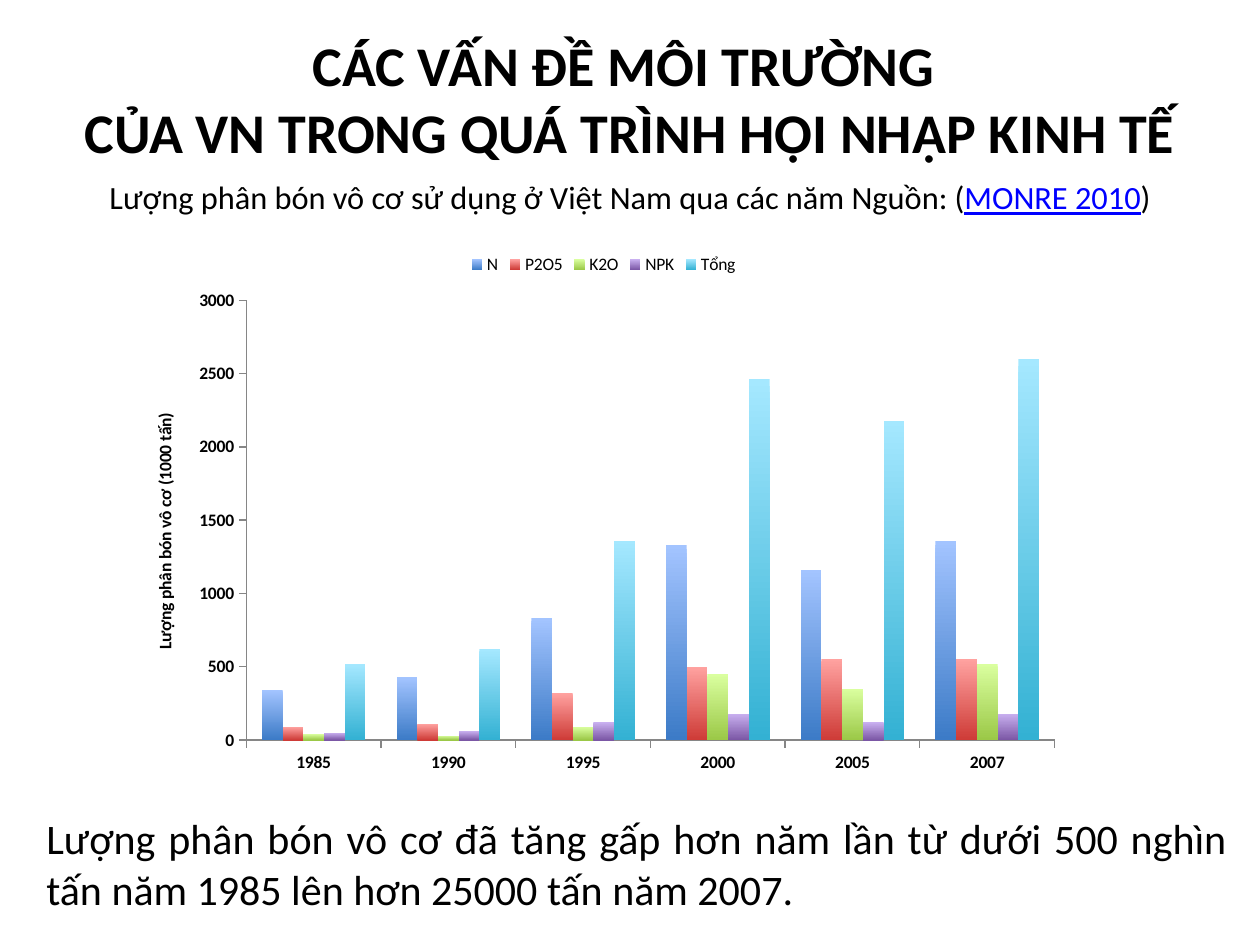
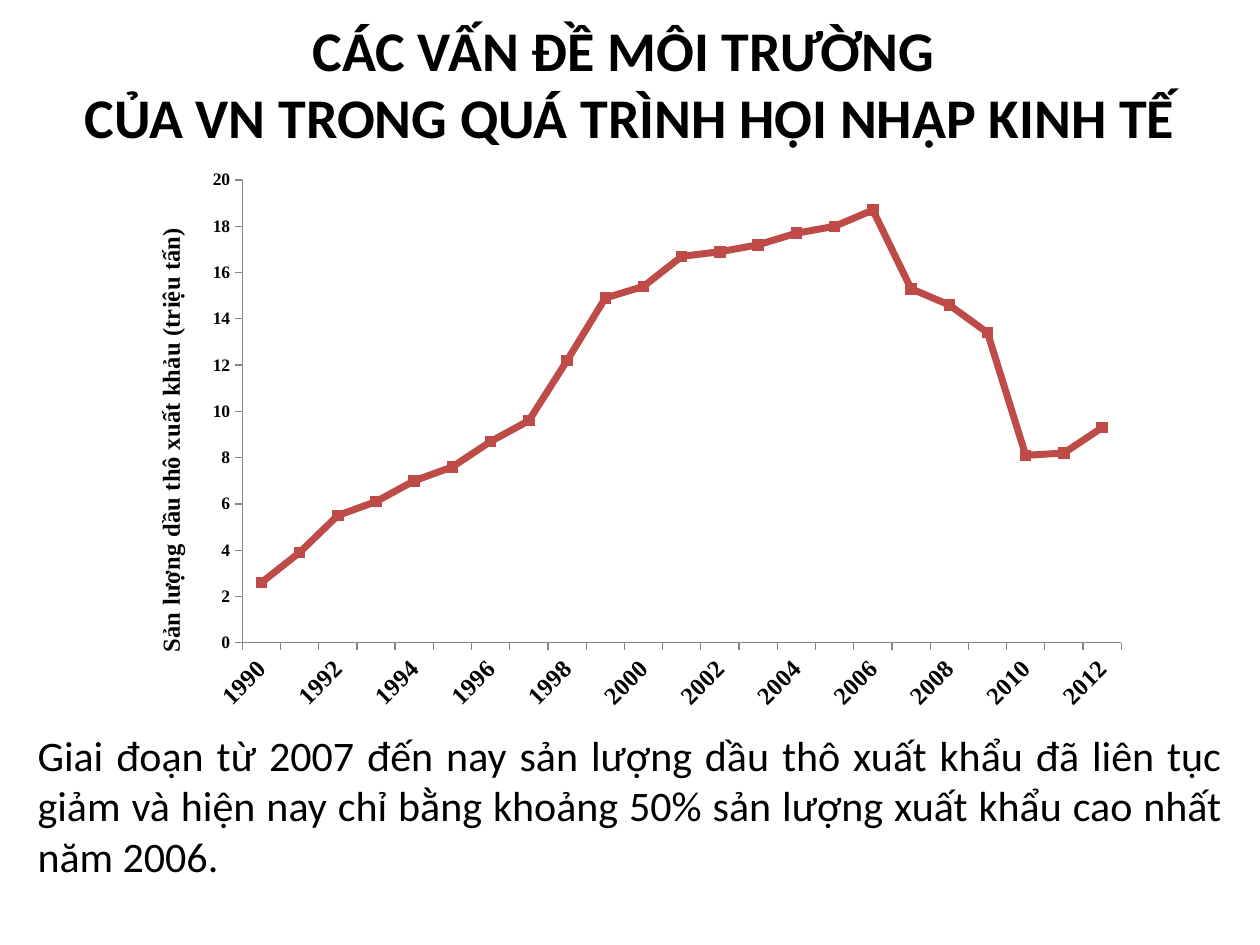
from dataclasses import dataclass
from lxml import etree
from pptx import Presentation
from pptx.chart.data import CategoryChartData as Data
from pptx.dml.color import RGBColor as RGB
from pptx.enum.chart import XL_CHART_TYPE as Kind, XL_LEGEND_POSITION as Pos
from pptx.enum.chart import XL_MARKER_STYLE as Mark, XL_TICK_MARK as Tick
from pptx.enum.text import MSO_ANCHOR as Anchor, MSO_AUTO_SIZE as Fit, PP_ALIGN as Align
from pptx.oxml.ns import qn
from pptx.util import Inches, Pt

TITLE = "CÁC VẤN ĐỀ MÔI TRƯỜNG \vCỦA VN TRONG QUÁ TRÌNH HỘI NHẬP KINH TẾ"
SOURCE = ["Lượng phân bón vô cơ sử dụng ở Việt Nam qua các năm Nguồn: (", "MONRE 2010", ")"]
FERT_NOTE = ("Lượng phân bón vô cơ đã tăng gấp hơn năm lần từ dưới 500 nghìn "
             "tấn năm 1985 lên hơn 25000 tấn năm 2007.")
OIL_NOTE = ("Giai đoạn từ 2007 đến nay sản lượng dầu thô xuất khẩu đã liên tục "
            "giảm và hiện nay chỉ bằng khoảng 50% sản lượng xuất khẩu cao nhất năm 2006.")

FERT_AXIS = "Lượng phân bón vô cơ (1000 tấn)"
FERT_YEARS = [1985, 1990, 1995, 2000, 2005, 2007]
FERT = {
    "N": [340, 430, 830, 1330, 1160, 1360],
    "P2O5": [90, 110, 320, 500, 550, 550],
    "K2O": [40, 30, 90, 450, 350, 520],
    "NPK": [50, 60, 120, 180, 120, 180],
    "Tổng": [520, 620, 1360, 2460, 2180, 2600],
}
OIL_AXIS = "Sản lượng dầu thô xuất khảu (triệu tấn)"
OIL_YEARS = range(1990, 2013)
OIL = {"Series 1": [2.6, 3.9, 5.5, 6.1, 7, 7.6, 8.7, 9.6, 12.2, 14.9, 15.4, 16.7,
                    16.9, 17.2, 17.7, 18, 18.7, 15.3, 14.6, 13.4, 8.1, 8.2, 9.3]}


@dataclass(frozen=True)
class Theme:
    sans: str = "Calibri"
    serif: str = "Times New Roman"
    ink: str = "000000"
    link: str = "0000FF"
    axis: str = "868686"
    line: str = "BE4B48"
    bars: tuple = (("A3C4FF", "3C7BC7"), ("FFA2A0", "CE3B37"), ("DAFF9F", "9BC847"),
                   ("C9B0F0", "7B57A5"), ("A5E8FF", "33B1D3"))
    head: float = 32
    body: float = 24
    sub: float = 18.5
    mid: float = 14
    small: float = 10


T = Theme()


def style(font, size, bold=False, face=T.sans, color=T.ink):
    font.name, font.size, font.bold = face, Pt(size), bold
    font.color.rgb = RGB.from_string(color)


def start(deck, top, height):
    """Add a slide with the shared title."""
    page = deck.slides.add_slide(deck.slide_layouts[5])
    title = page.shapes.title
    title.left, title.top = Inches(0.5), Inches(top)
    title.width, title.height = Inches(9), Inches(height)
    frame = title.text_frame
    frame.text = TITLE
    frame.auto_size, frame.vertical_anchor = Fit.NONE, Anchor.MIDDLE
    para = frame.paragraphs[0]
    para.alignment = Align.CENTER
    style(para.font, T.head, True)
    return page


def write(page, box, parts, size, align, before=0):
    frame = page.shapes.add_textbox(*map(Inches, box)).text_frame
    frame.word_wrap = True
    para = frame.paragraphs[0]
    para.alignment, para.space_before = align, Pt(before)
    style(para.font, size)
    for part in parts:
        para.add_run().text = part
    return para


def place(chart, box):
    """Fix the inner plot area, given as fractions of the chart."""
    area = chart._chartSpace.find(".//" + qn("c:plotArea"))
    for old in area.findall(qn("c:layout")):
        area.remove(old)
    layout = etree.Element(qn("c:layout"))
    area.insert(0, layout)
    manual = etree.SubElement(layout, qn("c:manualLayout"))
    keys = ("layoutTarget", "xMode", "yMode", "x", "y", "w", "h")
    for key, val in zip(keys, ("inner", "edge", "edge", *box)):
        etree.SubElement(manual, qn("c:" + key)).set("val", str(val))


def plot(page, kind, box, inner, years, rows, label, top, step, face, size):
    """Add a chart; size is for the axis title and the years."""
    data = Data()
    data.categories = [str(year) for year in years]
    for name, vals in rows.items():
        data.add_series(name, vals)
    chart = page.shapes.add_chart(kind, *map(Inches, box), data).chart
    style(chart.font, T.small)
    chart.has_title = chart.has_legend = False
    place(chart, inner)
    cat, val = chart.category_axis, chart.value_axis
    for axis, pts in ((cat, size), (val, T.small)):
        axis.has_major_gridlines = False
        axis.major_tick_mark, axis.minor_tick_mark = Tick.OUTSIDE, Tick.NONE
        axis.format.line.color.rgb = RGB.from_string(T.axis)
        style(axis.tick_labels.font, pts, True, face)
    val.minimum_scale, val.maximum_scale, val.major_unit = 0, top, step
    val.tick_labels.number_format = "General"
    val.tick_labels.number_format_is_linked = False
    frame = val.axis_title.text_frame
    frame.text = label
    style(frame.paragraphs[0].font, size, True, face)
    chart.plots[0].vary_by_categories = False
    return chart


def slant(axis, skip):
    """Turn the labels by 45 degrees and show one in every skip."""
    root = axis._element
    root.find(qn("c:txPr")).find(qn("a:bodyPr")).set("rot", "-2700000")
    gap = etree.Element(qn("c:tickLblSkip"))
    gap.set("val", str(skip))
    root.find(qn("c:noMultiLvlLbl")).addprevious(gap)


def fert(deck):
    page = start(deck, 0.25, 1.05)
    para = write(page, (0.5, 1.36, 9, 0.54), SOURCE, T.sub, Align.CENTER, 3.7)
    link = para.runs[1].font
    link.underline, link.color.rgb = True, RGB.from_string(T.link)
    write(page, (0.27, 6.4, 9.57, 0.91), [FERT_NOTE], T.body, Align.JUSTIFY)
    chart = plot(page, Kind.COLUMN_CLUSTERED, (1.06, 1.91, 7.46, 4.31),
                 (0.12, 0.11, 0.86, 0.81), FERT_YEARS, FERT, FERT_AXIS,
                 3000, 500, T.sans, T.small)
    chart.has_legend = True
    chart.legend.position, chart.legend.include_in_layout = Pos.TOP, False
    chart.plots[0].gap_width = 150
    for row, tones in zip(chart.plots[0].series, T.bars):
        fill = row.format.fill
        fill.gradient()
        fill.gradient_angle = 270
        for stop, tone in zip(fill.gradient_stops, tones):
            stop.color.rgb = RGB.from_string(tone)


def oil(deck):
    page = start(deck, 0.26, 0.79)
    para = write(page, (0.2, 5.74, 9.6, 1.63), [OIL_NOTE], T.body, Align.JUSTIFY, 6)
    para.space_after = Pt(6)
    chart = plot(page, Kind.LINE_MARKERS_STACKED, (1.04, 1.25, 8.02, 4.48),
                 (0.11, 0.04, 0.87, 0.82), OIL_YEARS, OIL, OIL_AXIS,
                 20, 2, T.serif, T.mid)
    slant(chart.category_axis, 2)
    row, tone = chart.plots[0].series[0], RGB.from_string(T.line)
    row.smooth = False
    row.format.line.width, row.format.line.color.rgb = Pt(4), tone
    row.marker.style, row.marker.size = Mark.SQUARE, 6
    look = row.marker.format
    look.fill.solid()
    look.fill.fore_color.rgb = look.line.color.rgb = tone


def main():
    deck = Presentation()
    deck.slide_width, deck.slide_height = Inches(10), Inches(7.5)
    fert(deck)
    oil(deck)
    deck.save("out.pptx")


if __name__ == "__main__":
    main()
